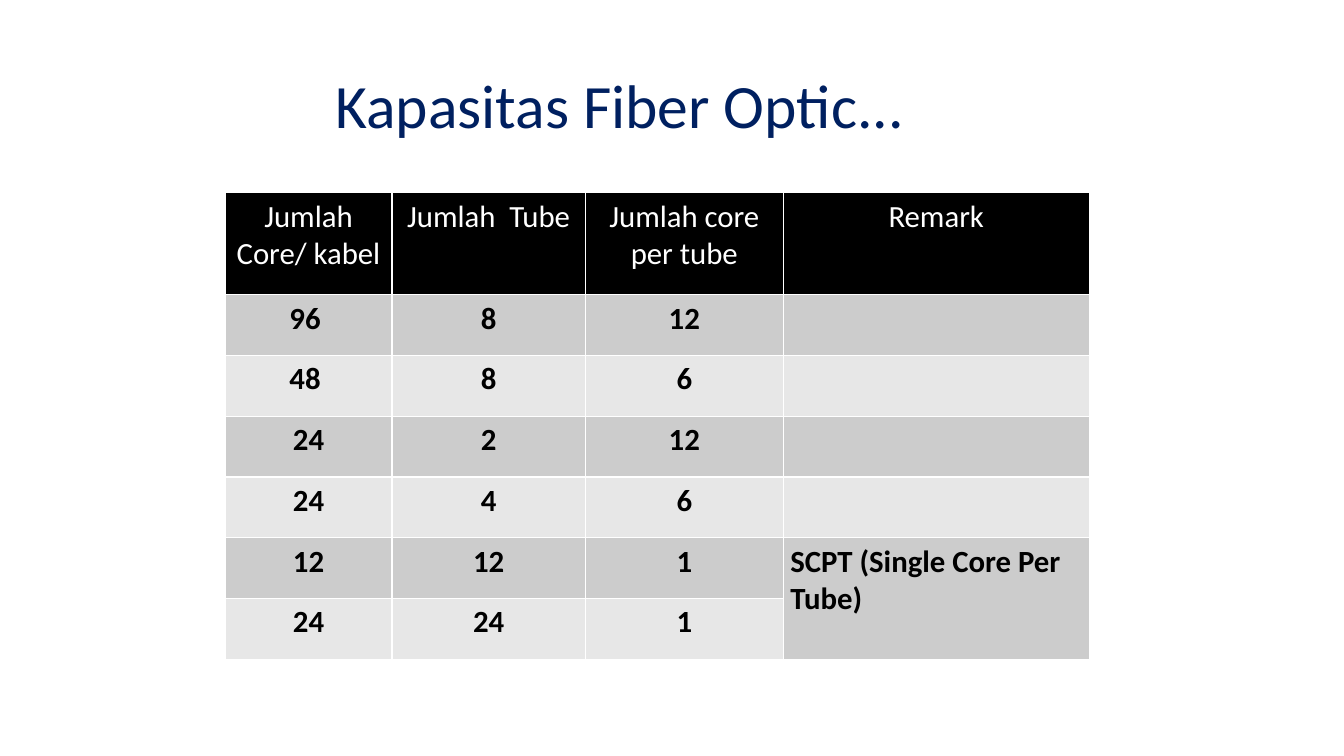
"""Build the slide on fiber optic cable capacity."""
from lxml import etree
from pptx import Presentation, util as u
from pptx.dml.color import RGBColor
from pptx.enum import text
from pptx.oxml import ns

NAVY = RGBColor(0x00, 0x20, 0x60)
BLACK = RGBColor(0x00, 0x00, 0x00)
WHITE = RGBColor(0xFF, 0xFF, 0xFF)
DARK_BAND = RGBColor(0xCC, 0xCC, 0xCC)
LIGHT_BAND = RGBColor(0xE7, 0xE7, 0xE7)
FONT = "Calibri"

COLUMN_WIDTHS = [4.21, 4.87, 4.99, 7.71]
HEADER_HEIGHT = 2.57
ROW_HEIGHT = 1.53
ROWS = [
    ["Jumlah Core/ kabel", "Jumlah  Tube", "Jumlah core per tube", "Remark"],
    ["96 ", "8", "12", ""],
    ["48 ", "8", "6", ""],
    ["24", "2", "12", ""],
    ["24", "4", "6", ""],
    ["12", "12", "1", "SCPT (Single Core Per Tube)"],
    ["24", "24", "1", ""],
]


def add_borders(cell):
    """Draw a thin white line on each side of the cell."""
    properties = cell._tc.get_or_add_tcPr()
    for side in ("a:lnL", "a:lnR", "a:lnT", "a:lnB"):
        line = etree.SubElement(properties, ns.qn(side), w=str(u.Pt(0.96)))
        fill = etree.SubElement(line, ns.qn("a:solidFill"))
        etree.SubElement(fill, ns.qn("a:srgbClr"), val=str(WHITE))


presentation = Presentation()
presentation.slide_width = u.Cm(33.87)
presentation.slide_height = u.Cm(19.05)
slide = presentation.slides.add_slide(presentation.slide_layouts[6])

title = slide.shapes.add_textbox(u.Cm(8.2), u.Cm(0.89), u.Cm(17.55), u.Cm(3.68))
title_frame = title.text_frame
title_frame.word_wrap = True
title_frame.vertical_anchor = text.MSO_ANCHOR.MIDDLE
title_frame.text = "Kapasitas Fiber Optic..."
title_paragraph = title_frame.paragraphs[0]
title_paragraph.line_spacing = 0.9
title_font = title_paragraph.runs[0].font
title_font.name = FONT
title_font.size = u.Pt(44)
title_font.color.rgb = NAVY

table_height = HEADER_HEIGHT + ROW_HEIGHT * (len(ROWS) - 1)
table = slide.shapes.add_table(
    len(ROWS), len(COLUMN_WIDTHS), u.Cm(5.67), u.Cm(4.86),
    u.Cm(sum(COLUMN_WIDTHS)), u.Cm(table_height)).table
for column, width in zip(table.columns, COLUMN_WIDTHS):
    column.width = u.Cm(width)

for row_index, values in enumerate(ROWS):
    is_header = row_index == 0
    table.rows[row_index].height = u.Cm(HEADER_HEIGHT if is_header else ROW_HEIGHT)
    band = BLACK if is_header else DARK_BAND if row_index % 2 else LIGHT_BAND
    for column_index, value in enumerate(values):
        cell = table.cell(row_index, column_index)
        add_borders(cell)
        cell.fill.solid()
        cell.fill.fore_color.rgb = band
        cell.margin_left = cell.margin_right = u.Cm(0.18)
        cell.margin_top = cell.margin_bottom = u.Cm(0.13)
        if not value:
            continue
        cell.text_frame.text = value
        paragraph = cell.text_frame.paragraphs[0]
        is_remark = column_index == 3 and not is_header
        paragraph.alignment = text.PP_ALIGN.LEFT if is_remark else text.PP_ALIGN.CENTER
        font = paragraph.runs[0].font
        font.name = FONT
        font.size = u.Pt(22)
        font.bold = not is_header
        font.color.rgb = WHITE if is_header else BLACK

table.cell(5, 3).merge(table.cell(6, 3))

presentation.save("out.pptx")
